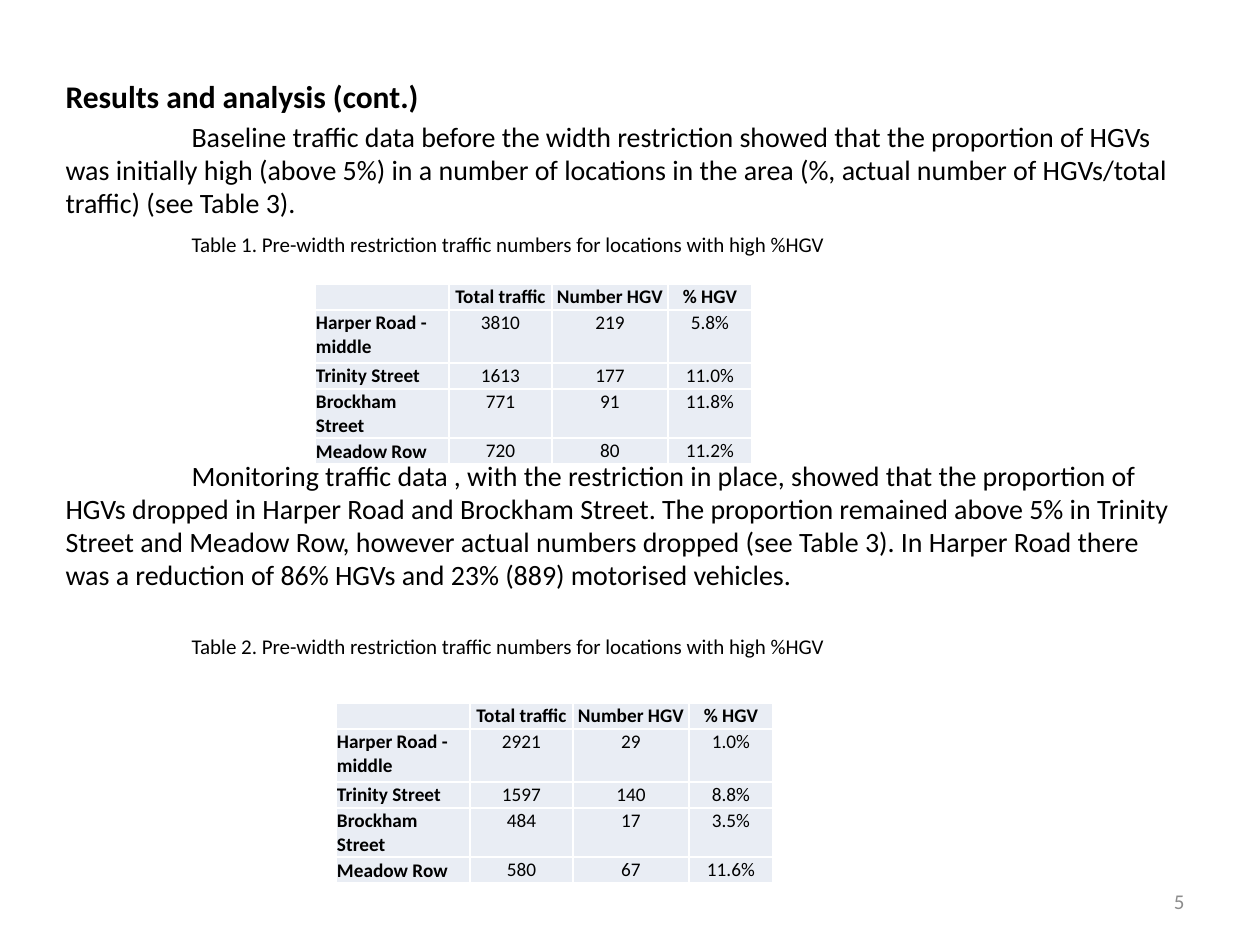
"""Build the traffic results slide with its two HGV tables."""
from dataclasses import dataclass

from lxml.etree import SubElement
from pptx import Presentation
from pptx.dml.color import RGBColor
from pptx.enum.text import MSO_ANCHOR as Anchor, MSO_AUTO_SIZE as AutoSize, PP_ALIGN as Align
from pptx.oxml.ns import qn
from pptx.util import Emu, Pt

EMU_PER_PX = 914400 / 126
FONT = "Calibri"
COLORS = {"text": "000000", "number": "8C8C8C", "cell": "E9EDF4", "border": "FFFFFF"}
COLUMN_WIDTHS = (134, 103, 116, 84)
ROW_HEIGHTS = (26, 53, 26, 49, 26)
HEADERS = ("", "Total traffic", "Number HGV", "% HGV")
STREETS = ("Harper Road - middle", "Trinity Street", "Brockham Street", "Meadow Row")
CELL_SIZE = 11


@dataclass(frozen=True)
class Passage:
    text: str
    size: int
    space_before: float
    indent: int = 126
    bold: bool = False


@dataclass(frozen=True)
class TrafficTable:
    left: int
    top: int
    counts: tuple[tuple[str, str, str], ...]


PASSAGES = (
    Passage("Results and analysis (cont.)", 18, 3, indent=0, bold=True),
    Passage(
        "Baseline traffic data before the width restriction showed that the proportion of "
        "HGVs was initially high (above 5%) in a number of locations in the area (%, actual "
        "number of HGVs/total traffic) (see Table 3).", 16, 3),
    Passage("Table 1. Pre-width restriction traffic numbers for locations with high %HGV", 12, 7),
    Passage(
        "Monitoring traffic data , with the restriction in place, showed that the proportion "
        "of HGVs dropped in Harper Road and Brockham Street. The proportion remained above 5% "
        "in Trinity Street and Meadow Row, however actual numbers dropped (see Table 3). In "
        "Harper Road there was a reduction of 86% HGVs and 23% (889) motorised vehicles.",
        16, 116),
    Passage("Table 2. Pre-width restriction traffic numbers for locations with high %HGV", 12, 24.5),
)
TABLES = (
    TrafficTable(315, 284, (("3810", "219", "5.8%"), ("1613", "177", "11.0%"),
                            ("771", "91", "11.8%"), ("720", "80", "11.2%"))),
    TrafficTable(336, 703, (("2921", "29", "1.0%"), ("1597", "140", "8.8%"),
                            ("484", "17", "3.5%"), ("580", "67", "11.6%"))),
)


def px(length: int) -> Emu:
    """Turn px into EMU."""
    return Emu(round(length * EMU_PER_PX))


def format_runs(paragraph, size: int, color: str = "text", bold: bool = False) -> None:
    """Give every run of a paragraph its font."""
    for run in paragraph.runs:
        run.font.name = FONT
        run.font.size = Pt(size)
        run.font.bold = bold
        run.font.color.rgb = RGBColor.from_string(COLORS[color])


def fill_body(body, passages: tuple[Passage, ...]) -> None:
    """Place the body and write its passages without bullets."""
    body.left, body.top, body.width, body.height = px(53), px(73), px(1134), px(798)
    frame = body.text_frame
    frame.text = "\n".join(passage.text for passage in passages)
    frame.auto_size = AutoSize.NONE
    for paragraph, passage in zip(frame.paragraphs, passages):
        paragraph.space_before = Pt(passage.space_before)
        paragraph.line_spacing = 0.98
        properties = paragraph._p.get_or_add_pPr()
        properties.set("marL", "0")
        properties.set("indent", str(px(passage.indent)))
        SubElement(properties, qn("a:buNone"))
        format_runs(paragraph, passage.size, bold=passage.bold)


def add_borders(cell) -> None:
    """Draw thin borders on all four sides of a cell."""
    properties = cell._tc.get_or_add_tcPr()
    for side in ("lnL", "lnR", "lnT", "lnB"):
        line = SubElement(properties, qn(f"a:{side}"), w=str(Pt(1)))
        SubElement(SubElement(line, qn("a:solidFill")), qn("a:srgbClr"), val=COLORS["border"])


def format_cell(cell, text: str, bold: bool, align: Align) -> None:
    """Write one table cell and set its look."""
    cell.margin_left = cell.margin_right = cell.margin_top = px(1)
    cell.margin_bottom = 0
    add_borders(cell)
    cell.fill.solid()
    cell.fill.fore_color.rgb = RGBColor.from_string(COLORS["cell"])
    paragraph = cell.text_frame.paragraphs[0]
    paragraph.text = text
    paragraph.alignment = align
    format_runs(paragraph, CELL_SIZE, bold=bold)
    if not text:
        SubElement(paragraph._p, qn("a:endParaRPr"), sz=str(CELL_SIZE * 100))


def add_traffic_table(slide, traffic: TrafficTable) -> None:
    """Add a table of traffic counts by street."""
    rows = [HEADERS, *((street, *counts) for street, counts in zip(STREETS, traffic.counts))]
    table = slide.shapes.add_table(
        len(rows), len(HEADERS), px(traffic.left), px(traffic.top),
        px(sum(COLUMN_WIDTHS)), px(sum(ROW_HEIGHTS))).table
    table.first_row = table.horz_banding = False
    for column, width in zip(table.columns, COLUMN_WIDTHS):
        column.width = px(width)
    for row, height in zip(table.rows, ROW_HEIGHTS):
        row.height = px(height)
    for r, values in enumerate(rows):
        for c, value in enumerate(values):
            format_cell(table.cell(r, c), value, r == 0 or c == 0,
                        Align.LEFT if c == 0 else Align.CENTER)
    table.cell(len(rows) - 1, 0).vertical_anchor = Anchor.BOTTOM


def add_page_number(slide, number: str) -> None:
    """Add the page number at the bottom right."""
    frame = slide.shapes.add_textbox(px(903), px(876), px(294), px(50)).text_frame
    frame.word_wrap = True
    frame.vertical_anchor = Anchor.MIDDLE
    frame.text = number
    frame.paragraphs[0].alignment = Align.RIGHT
    format_runs(frame.paragraphs[0], 12, "number")


def main() -> None:
    """Build and save the presentation."""
    deck = Presentation()
    deck.slide_width, deck.slide_height = px(1260), px(945)
    slide = deck.slides.add_slide(deck.slide_layouts[1])
    title = slide.shapes.title
    title._element.getparent().remove(title._element)
    fill_body(slide.placeholders[1], PASSAGES)
    add_page_number(slide, "5")
    for traffic in TABLES:
        add_traffic_table(slide, traffic)
    deck.save("out.pptx")


if __name__ == "__main__":
    main()
